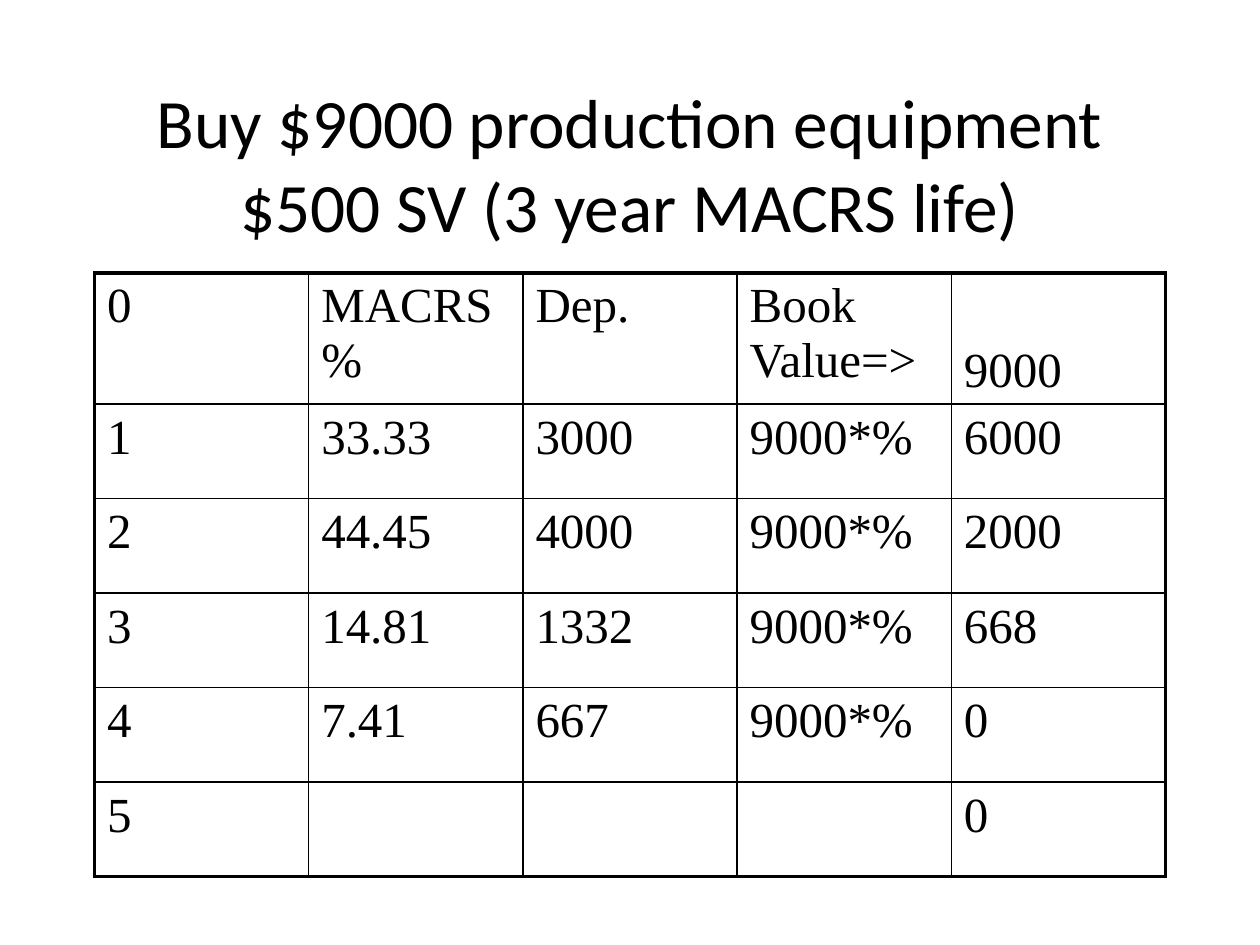
from typing import NamedTuple

from lxml import etree
from pptx import Presentation
from pptx.dml.color import RGBColor
from pptx.enum.text import MSO_ANCHOR, MSO_AUTO_SIZE, PP_ALIGN
from pptx.oxml.ns import qn
from pptx.util import Pt

MIDDLE, BOTTOM = MSO_ANCHOR.MIDDLE, MSO_ANCHOR.BOTTOM
CENTER = PP_ALIGN.CENTER
NO_AUTOFIT = MSO_AUTO_SIZE.NONE
TITLE_ONLY = 5

COLORS = {"text": "000000", "border": "000000"}
LEFT, WIDTH = 54, 612
TITLE_TOP, TITLE_HEIGHT = 48, 90
TABLE_TOP, HEADER_HEIGHT, ROW_HEIGHT = 156, 75, 54
OUTER, INNER = 2.25, 1


class ScheduleRow(NamedTuple):
    year: str
    rate: str = ""
    depreciation: str = ""
    formula: str = ""
    book_value: str = ""


SCHEDULE = [
    ScheduleRow("0", "MACRS%", "Dep.", "Book Value=>", "9000"),
    ScheduleRow("1", "33.33", "3000", "9000*%", "6000"),
    ScheduleRow("2", "44.45", "4000", "9000*%", "2000"),
    ScheduleRow("3", "14.81", "1332", "9000*%", "668"),
    ScheduleRow("4", "7.41", "667", "9000*%", "0"),
    ScheduleRow("5", book_value="0"),
]


def format_text(tf, font: str, size: float) -> None:
    for p in tf.paragraphs:
        for r in p.runs:
            r.font.name = font
            r.font.size = Pt(size)
            r.font.bold = False
            r.font.color.rgb = RGBColor.from_string(COLORS["text"])


def add_border(cell, side: str, width: float) -> None:
    tc_pr = cell._tc.get_or_add_tcPr()
    ln = etree.SubElement(tc_pr, qn(f"a:ln{side}"), w=str(Pt(width)))
    fill = etree.SubElement(ln, qn("a:solidFill"))
    etree.SubElement(fill, qn("a:srgbClr"), val=COLORS["border"])


def add_title(s, text: str) -> None:
    sp = s.shapes.title
    sp.left, sp.top = Pt(LEFT), Pt(TITLE_TOP)
    sp.width, sp.height = Pt(WIDTH), Pt(TITLE_HEIGHT)
    tf = sp.text_frame
    tf.text = text
    tf.auto_size = NO_AUTOFIT
    tf.word_wrap = True
    tf.vertical_anchor = MIDDLE
    tf.paragraphs[0].alignment = CENTER
    format_text(tf, "Calibri", 39.6)


def add_schedule(s, schedule: list[ScheduleRow]) -> None:
    n_rows, n_cols = len(schedule), len(ScheduleRow._fields)
    heights = [HEADER_HEIGHT] + [ROW_HEIGHT] * (n_rows - 1)
    table = s.shapes.add_table(n_rows, n_cols, Pt(LEFT), Pt(TABLE_TOP),
                               Pt(WIDTH), Pt(sum(heights))).table
    table.first_row = table.horz_banding = False
    for col in table.columns:
        col.width = Pt(WIDTH / n_cols)
    for i, (row, height) in enumerate(zip(schedule, heights)):
        table.rows[i].height = Pt(height)
        for j, text in enumerate(row):
            cell = table.cell(i, j)
            cell.text = text
            format_text(cell.text_frame, "Times New Roman", 28)
            on_edge = {"L": j == 0, "R": j == n_cols - 1,
                       "T": i == 0, "B": i == n_rows - 1}
            for side, outer in on_edge.items():
                add_border(cell, side, OUTER if outer else INNER)
            cell.fill.background()
    table.cell(0, n_cols - 1).vertical_anchor = BOTTOM


def main() -> None:
    prs = Presentation()
    prs.slide_width, prs.slide_height = Pt(720), Pt(540)
    s = prs.slides.add_slide(prs.slide_layouts[TITLE_ONLY])
    add_title(s, "Buy $9000 production equipment\v$500 SV (3 year MACRS life)")
    add_schedule(s, SCHEDULE)
    prs.save("out.pptx")


if __name__ == "__main__":
    main()
